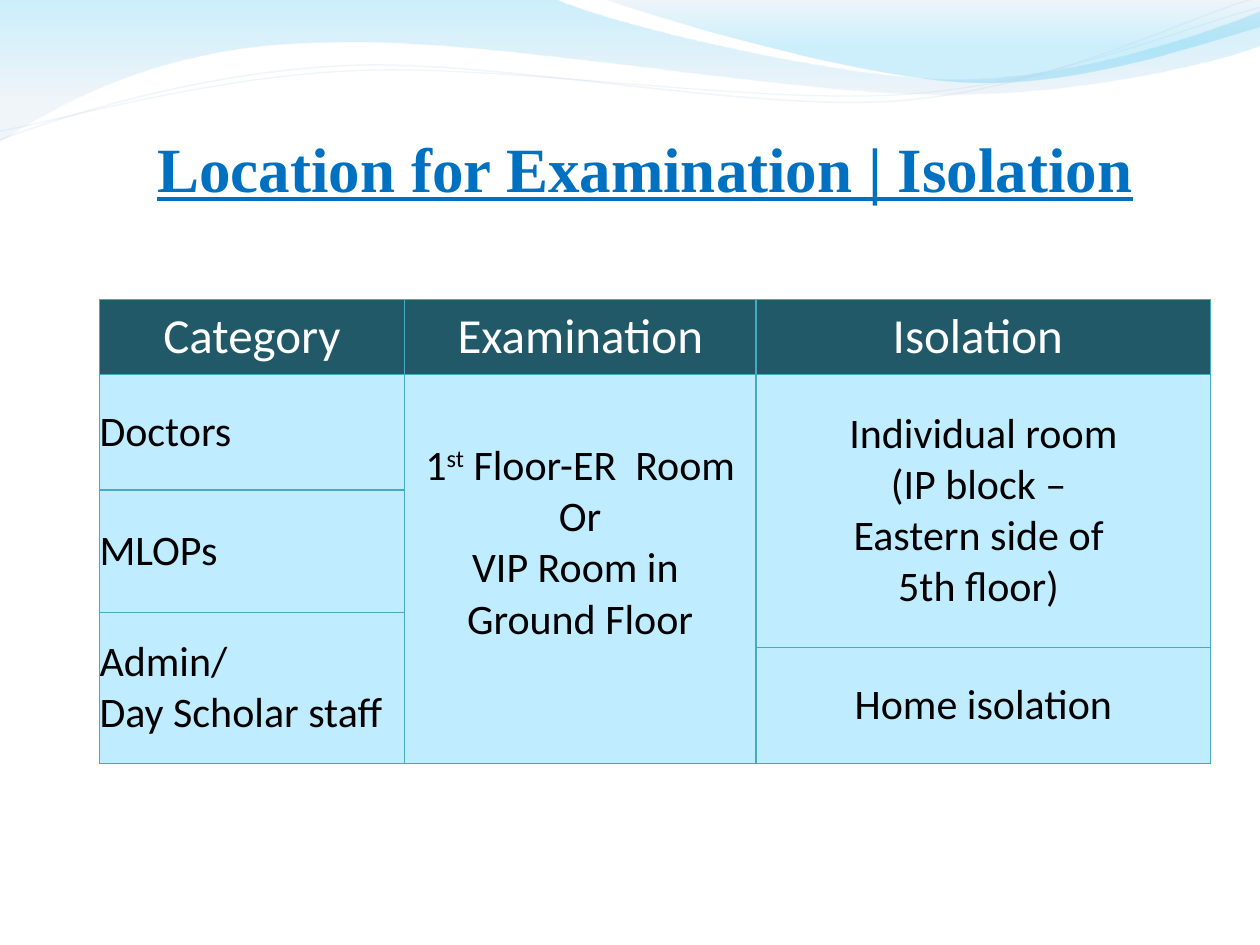
from dataclasses import dataclass
from math import cos, radians, sin

from lxml.etree import SubElement
from pptx import Presentation
from pptx.dml.color import RGBColor
from pptx.enum.text import MSO_ANCHOR, PP_ALIGN
from pptx.oxml.ns import qn
from pptx.util import Inches, Pt


@dataclass(frozen=True)
class Theme:
    title: str = "0070C0"
    header: str = "215968"
    body: str = "BFECFF"
    border: str = "46AAC5"
    sky: str = "00B0F0"
    mist: str = "B7CDE7"
    white: str = "FFFFFF"
    black: str = "000000"
    title_size: int = 36
    header_size: int = 28
    body_size: int = 24
    title_font: str = "Times New Roman"
    body_font: str = "Calibri"


theme = Theme()


def write(tf, text, size=theme.body_size, color=theme.black, font=theme.body_font,
          align=PP_ALIGN.LEFT, bold=False, underline=False):
    for i, line in enumerate(text.split("\n")):
        p = tf.paragraphs[0] if i == 0 else tf.add_paragraph()
        p.alignment = align
        for j, part in enumerate(line.split("^")):
            r = p.add_run()
            r.text = part
            r.font.size = Pt(size)
            r.font.name = font
            r.font.bold = bold
            r.font.underline = underline
            r.font.color.rgb = RGBColor.from_string(color)
            if j % 2:
                r._r.get_or_add_rPr().set("baseline", "30000")


def add_wave(shapes, start, segments, closed, tilt=0, center=(4.99, 0.56)):
    points = [start] + [seg[k:k + 2] for seg in segments for k in range(0, len(seg), 2)]
    turn = radians(-tilt)
    turned = []
    for x, y in points:
        dx, dy = x - center[0], y - center[1]
        turned.append((Inches(center[0] + dx * cos(turn) - dy * sin(turn)),
                       Inches(center[1] + dx * sin(turn) + dy * cos(turn))))
    builder = shapes.build_freeform(*turned[0], scale=1.0)
    builder.add_line_segments(turned[1:], close=closed)
    sp = builder.convert_to_shape()
    sp.rotation = tilt
    sp.shadow.inherit = False
    lines = iter(list(sp.element.iter(qn("a:lnTo"))))
    for seg in segments:
        line = next(lines)
        if len(seg) == 6:
            line.tag = qn("a:cubicBezTo")
            for extra in (next(lines), next(lines)):
                line.append(extra[0])
                extra.getparent().remove(extra)
    return sp


prs = Presentation()
prs.slide_width, prs.slide_height = Inches(10), Inches(7.5)
s = prs.slides.add_slide(prs.slide_layouts[5])
s.background.fill.solid()
s.background.fill.fore_color.rgb = RGBColor.from_string(theme.white)

title = s.shapes.title
title.left, title.top, title.width, title.height = (Inches(v) for v in (0.12, 0.89, 10, 0.87))
tf = title.text_frame
tf.word_wrap = True
tf.vertical_anchor = MSO_ANCHOR.MIDDLE
tf.margin_left = tf.margin_right = tf.margin_top = tf.margin_bottom = Inches(0.05)
write(tf, "Location for Examination | Isolation", size=theme.title_size, color=theme.title,
      font=theme.title_font, align=PP_ALIGN.CENTER, bold=True, underline=True)

bands = [
    ((0, -0.01), [(4.4, -0.01), (4.76, 0.17, 6.64, 0.63, 7.58, 0.63),
                  (8.53, 0.63, 9.58, 0.26, 10, 0.09), (10.01, 0.36),
                  (9.83, 0.44, 8.7, 0.76, 7.46, 0.75), (6.22, 0.75, 3.82, 0.28, 2.57, 0.34),
                  (1.29, 0.35, 0.46, 0.83, -0.01, 1.13)],
     [(0, theme.sky), (0.7, theme.mist)]),
    ((4.79, -0.01), [(5.09, 0.11, 6.82, 0.62, 7.69, 0.65), (8.56, 0.69, 9.61, 0.32, 10, 0.21),
                     (10, 0)],
     [(0, theme.mist), (0.53, theme.sky)]),
]
strands = [
    ((0, 1.11), [(0.48, 0.93, 1.58, 0.57, 2.77, 0.52), (3.95, 0.47, 5.93, 0.89, 7.13, 0.8),
                 (8.33, 0.71, 9.38, 0.15, 9.98, -0.02)], 0.85),
    ((0, 1.04), [(0.47, 0.96, 1.64, 0.61, 2.83, 0.56), (4.03, 0.51, 5.97, 0.83, 7.17, 0.75),
                 (8.36, 0.67, 9.41, 0.21, 10, 0.06)], 0.75),
]
waves = []
for start, segments, stops in bands:
    sp = add_wave(s.shapes, start, segments, True)
    sp.line.fill.background()
    sp.fill.gradient()
    sp.fill.gradient_angle = 270
    for stop, (position, color) in zip(sp.fill.gradient_stops, stops):
        stop.position = position
        stop.color.rgb = RGBColor.from_string(color)
    waves.append(sp)
for start, segments, weight in strands:
    sp = add_wave(s.shapes, start, segments, False, tilt=-2.7)
    sp.fill.background()
    sp.line.width = Pt(weight)
    sp.line.color.rgb = RGBColor.from_string(theme.mist)
    waves.append(sp)
for sp in waves:
    for color in sp.element.spPr.iter(qn("a:srgbClr")):
        SubElement(color, qn("a:alpha"), val="20000")
    title.element.addprevious(sp.element)

widths = [2.42, 2.79, 3.61]
heights = [0.59, 0.92, 0.97, 0.28, 0.92]
table = s.shapes.add_table(len(heights), len(widths), Inches(0.79), Inches(2.38),
                           Inches(sum(widths)), Inches(sum(heights))).table
table.horz_banding = False
for column, width in zip(table.columns, widths):
    column.width = Inches(width)
for row, height in zip(table.rows, heights):
    row.height = Inches(height)

for r, row in enumerate(table.rows):
    for cell in row.cells:
        cell.margin_left = cell.margin_right = cell.margin_top = cell.margin_bottom = 0
        cell.vertical_anchor = MSO_ANCHOR.MIDDLE
        tcPr = cell._tc.get_or_add_tcPr()
        for side in ("lnL", "lnR", "lnT", "lnB"):
            ln = SubElement(tcPr, qn(f"a:{side}"), w=str(Pt(0.75)))
            SubElement(SubElement(ln, qn("a:solidFill")), qn("a:srgbClr"), val=theme.border)
        cell.fill.solid()
        cell.fill.fore_color.rgb = RGBColor.from_string(theme.body if r else theme.header)

for first, last in (((1, 1), (4, 1)), ((1, 2), (3, 2)), ((3, 0), (4, 0))):
    table.cell(*first).merge(table.cell(*last))
table.cell(1, 1).margin_bottom = Inches(0.41)

for c, heading in enumerate(("Category", "Examination", "Isolation ")):
    write(table.cell(0, c).text_frame, heading, size=theme.header_size, color=theme.white,
          align=PP_ALIGN.CENTER)
entries = {
    (1, 0): "Doctors ",
    (2, 0): "MLOPs ",
    (3, 0): "Admin/\nDay Scholar staff",
    (1, 1): "1^st^ Floor-ER  Room\nOr\nVIP Room in \nGround Floor",
    (1, 2): "Individual room\n(IP block – \nEastern side of \n5th floor) ",
    (4, 2): "Home isolation",
}
for (r, c), text in entries.items():
    write(table.cell(r, c).text_frame, text, align=PP_ALIGN.CENTER if c else PP_ALIGN.LEFT)

prs.save("out.pptx")
